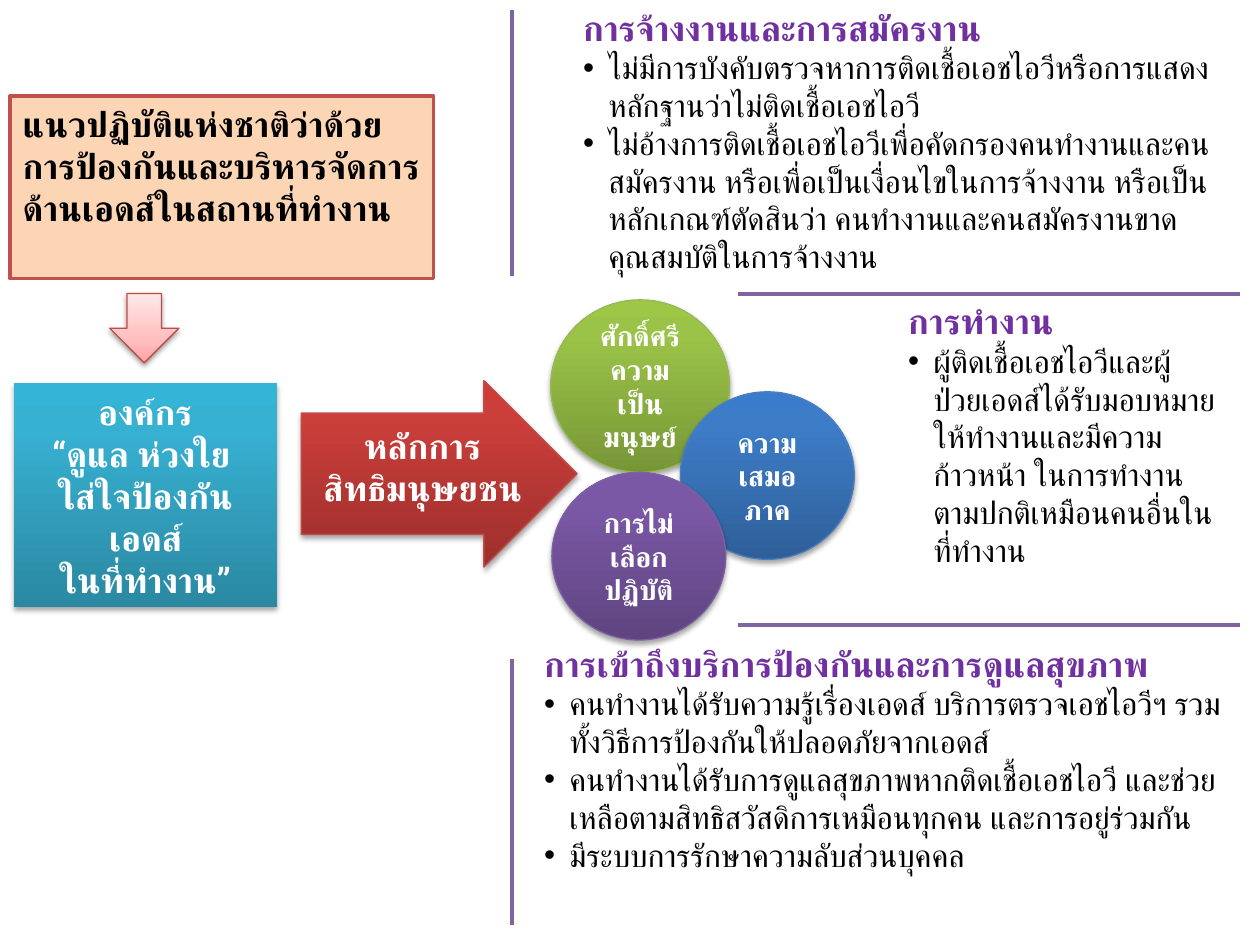
from dataclasses import dataclass
from typing import Optional

from lxml import etree
from pptx import Presentation
from pptx import util as u
from pptx.dml.color import RGBColor
from pptx.enum import shapes, text
from pptx.oxml import ns

MSO = shapes.MSO_SHAPE
ALIGN = text.PP_ALIGN
ANCHOR = text.MSO_ANCHOR
AUTO = text.MSO_AUTO_SIZE
Box = tuple[float, float, float, float]
Stops = tuple[tuple[int, str], ...]


@dataclass(frozen=True)
class Theme:
    font: str = "Roboto"
    white: str = "FFFFFF"
    black: str = "000000"
    heading: str = "7030A0"
    rule: str = "8064A2"
    title_fill: str = "FCD5B5"
    title_line: str = "C0504D"
    red_line: str = "BF4C48"
    head_size: int = 20
    body_size: int = 18
    circle_size: int = 16
    indent: float = 0.2


@dataclass(frozen=True)
class Block:
    """A diagram shape with optional gradient and centred white text."""
    kind: MSO
    box: Box
    lines: tuple[str, ...] = ()
    size: int = 20
    stops: Stops = ()
    line: Optional[str] = None
    adjust: tuple[float, ...] = ()
    shadow: tuple[int, float] = (35, 1.8)  # opacity %, distance pt


@dataclass(frozen=True)
class Topic:
    """A purple heading above bullets."""
    box: Box
    heading: str
    bullets: tuple[str, ...]


T = Theme()


def grad(*colours: str, middle: int = 80) -> Stops:
    return tuple(zip((0, middle, 100), colours))


TITLE = "แนวปฏิบัติแห่งชาติว่าด้วยการป้องกันและบริหารจัดการด้านเอดส์ในสถานที่ทำงาน"

# Blocks from back to front
BLOCKS = (
    Block(MSO.RIGHT_ARROW, (2.39, 3.02, 2.19, 1.48), line=T.red_line,
          stops=grad("9C2F2D", "CB3E3A", "CE3B37"), adjust=(0.65, 0.5)),
    Block(MSO.OVAL, (4.37, 2.38, 1.42, 1.37), ("ศักดิ์ศรี", "ความเป็นมนุษย์"),
          T.circle_size, grad("779737", "9BC348", "9DC746"), "98B955"),
    Block(MSO.OVAL, (5.4, 3.11, 1.38, 1.33), ("ความ", "เสมอภาค"),
          T.circle_size, grad("2F5F99", "3D7CC7", "3A7CCB"), "4B7EBC"),
    Block(MSO.OVAL, (1.83, 3.31, 3.05, 0.78), ("หลักการ", "สิทธิมนุษยชน"), T.head_size),
    Block(MSO.OVAL, (4.38, 3.75, 1.38, 1.33), ("การไม่", "เลือกปฏิบัติ"),
          T.circle_size, grad("5F4480", "7B58A6", "7C57A8"), "7D60A0"),
    Block(MSO.RECTANGLE, (0.11, 3.04, 2.09, 1.78),
          ("องค์กร", "“ดูแล ห่วงใย ", "ใส่ใจป้องกันเอดส์", "ในที่ทำงาน”"),
          T.head_size, grad("2A88A2", "37B1D2", "34B4D6")),
    Block(MSO.DOWN_ARROW, (0.87, 2.33, 0.55, 0.55), line=T.red_line,
          stops=grad("FFA6A5", "FFC0BF", "FFE7E7", middle=35), shadow=(38, 1.6)),
)

TOPICS = (
    Topic((4.53, 0, 5.47, 2.32), "การจ้างงานและการสมัครงาน", (
        "ไม่มีการบังคับตรวจหาการติดเชื้อเอชไอวีหรือการแสดงหลักฐานว่าไม่ติดเชื้อเอชไอวี",
        "ไม่อ้างการติดเชื้อเอชไอวีเพื่อคัดกรองคนทำงานและคนสมัครงาน หรือเพื่อเป็นเงื่อนไขในการจ้างงาน "
        "หรือเป็นหลักเกณฑ์ตัดสินว่า คนทำงานและคนสมัครงานขาดคุณสมบัติในการจ้างงาน")),
    Topic((7.11, 2.33, 2.66, 2.56), "การทำงาน", (
        "ผู้ติดเชื้อเอชไอวีและผู้ป่วยเอดส์ได้รับมอบหมายให้ทำงานและมีความก้าวหน้า "
        "ในการทำงานตามปกติเหมือนคนอื่นในที่ทำงาน",)),
    Topic((4.22, 5.05, 5.78, 2.26), "การเข้าถึงบริการป้องกันและการดูแลสุขภาพ", (
        "คนทำงานได้รับความรู้เรื่องเอดส์ บริการตรวจเอชไอวีฯ รวมทั้งวิธีการป้องกันให้ปลอดภัยจากเอดส์",
        "คนทำงานได้รับการดูแลสุขภาพหากติดเชื้อเอชไอวี และช่วยเหลือตามสิทธิสวัสดิการเหมือนทุกคน "
        "และการอยู่ร่วมกัน",
        "มีระบบการรักษาความลับส่วนบุคคล")),
)

RULES: tuple[Box, ...] = (
    (5.86, 2.33, 9.84, 2.33), (5.86, 4.96, 9.84, 4.96),
    (4.06, 0.08, 4.06, 2.19), (4.06, 5.23, 4.06, 7.34),
)


def inches(values: Box) -> list[u.Length]:
    return [u.Inches(v) for v in values]


def set_all(target, formats: dict) -> None:
    for name, value in formats.items():
        setattr(target, name, value)


def sub(parent, tag: str, **attrs):
    return etree.SubElement(parent, ns.qn(tag), {k: str(v) for k, v in attrs.items()})


def write(p, words: str, size: int, colour: str, bold: bool, align=ALIGN.LEFT) -> None:
    p.alignment = align
    r = p.add_run()
    r.text = words
    set_all(r.font, {"name": T.font, "size": u.Pt(size), "bold": bold})
    r.font.color.rgb = RGBColor.from_string(colour)
    sub(r.font._element, "a:cs", typeface=T.font)  # Thai uses the complex-script font


def next_paragraph(tf, index: int):
    return tf.add_paragraph() if index else tf.paragraphs[0]


def set_line(line, colour: str, width: float) -> None:
    line.color.rgb = RGBColor.from_string(colour)
    line.width = u.Pt(width)


def set_gradient(sp, stops: Stops) -> None:
    sp.fill.gradient()
    sp.fill.gradient_angle = 90
    stop_list = sp._element.spPr.find(".//" + ns.qn("a:gsLst"))
    for old in list(stop_list):
        stop_list.remove(old)
    for position, colour in stops:
        sub(sub(stop_list, "a:gs", pos=position * 1000), "a:srgbClr", val=colour)


def add_shadow(sp, opacity: int, distance: float) -> None:
    effects = sp._element.spPr.find(ns.qn("a:effectLst"))
    shadow = sub(effects, "a:outerShdw", blurRad=u.Pt(3.1), dist=u.Pt(distance),
                 dir=90 * 60000, rotWithShape=0)
    sub(sub(shadow, "a:srgbClr", val=T.black), "a:alpha", val=opacity * 1000)


def add_title(s) -> None:
    sp = s.shapes.title
    set_all(sp, dict(zip(("left", "top", "width", "height"), inches((0.08, 0.76, 3.36, 1.45)))))
    sp.fill.solid()
    sp.fill.fore_color.rgb = RGBColor.from_string(T.title_fill)
    set_line(sp.line, T.title_line, 2)
    tf = sp.text_frame
    set_all(tf, {"word_wrap": True, "auto_size": AUTO.NONE, "vertical_anchor": ANCHOR.TOP})
    write(tf.paragraphs[0], TITLE, T.head_size, T.black, True)


def add_block(s, block: Block) -> None:
    sp = s.shapes.add_shape(block.kind, *inches(block.box))
    sp.shadow.inherit = False
    for i, value in enumerate(block.adjust):
        sp.adjustments[i] = value
    if block.stops:
        set_gradient(sp, block.stops)
        add_shadow(sp, *block.shadow)
    else:
        sp.fill.background()
    if block.line:
        set_line(sp.line, block.line, 0.75)
    else:
        sp.line.fill.background()
    tf = sp.text_frame
    set_all(tf, {"word_wrap": True, "vertical_anchor": ANCHOR.MIDDLE})
    for i, words in enumerate(block.lines):
        write(next_paragraph(tf, i), words, block.size, T.white, True, ALIGN.CENTER)


def add_topic(s, topic: Topic) -> None:
    tf = s.shapes.add_textbox(*inches(topic.box)).text_frame
    set_all(tf, {"word_wrap": True, "auto_size": AUTO.SHAPE_TO_FIT_TEXT})
    write(tf.paragraphs[0], topic.heading, T.head_size, T.heading, True)
    for words in topic.bullets:
        p = tf.add_paragraph()
        write(p, words, T.body_size, T.black, False)
        pPr = p._p.get_or_add_pPr()
        set_all_xml = {"marL": u.Inches(T.indent), "indent": -u.Inches(T.indent)}
        for name, value in set_all_xml.items():
            pPr.set(name, str(value))
        sub(pPr, "a:buFont", typeface="Arial")
        sub(pPr, "a:buChar", char="•")


def add_rule(s, ends: Box) -> None:
    line = s.shapes.add_connector(shapes.MSO_CONNECTOR.STRAIGHT, *inches(ends))
    set_line(line.line, T.rule, 2.25)
    sub(line._element.spPr, "a:effectLst")


def main() -> None:
    prs = Presentation()
    set_all(prs, {"slide_width": u.Inches(10), "slide_height": u.Inches(7.5)})
    s = prs.slides.add_slide(prs.slide_layouts[5])
    add_title(s)
    for draw, items in ((add_block, BLOCKS), (add_topic, TOPICS), (add_rule, RULES)):
        for item in items:
            draw(s, item)
    prs.save("out.pptx")


if __name__ == "__main__":
    main()
